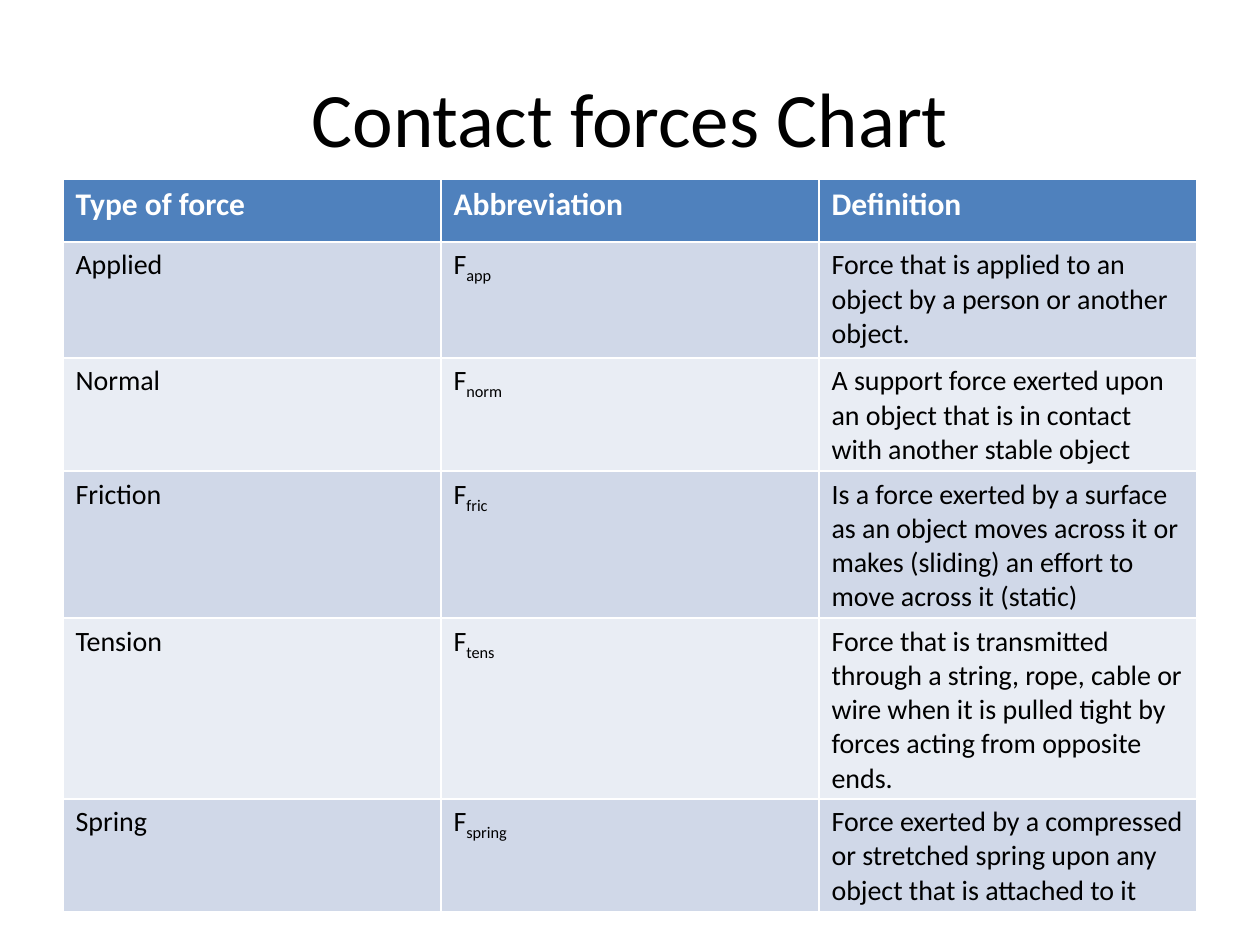
from typing import NamedTuple

from pptx import Presentation
from pptx.dml.color import RGBColor
from pptx.enum import text
from pptx.util import Inches, Pt

FONT = "Calibri"
BLACK = RGBColor(0x00, 0x00, 0x00)
WHITE = RGBColor(0xFF, 0xFF, 0xFF)
HEADER_BLUE = RGBColor(0x4F, 0x81, 0xBD)
BANDS = (RGBColor(0xD0, 0xD8, 0xE8), RGBColor(0xE9, 0xED, 0xF4))


class Force(NamedTuple):
    name: str
    subscript: str
    definition: str


HEADERS = ("Type of force", "Abbreviation", "Definition")
FORCES = (
    Force("Applied", "app",
          "Force that is applied to an object by a person or another object."),
    Force("Normal", "norm",
          "A support force exerted upon an object that is in contact with "
          "another stable object"),
    Force("Friction", "fric",
          "Is a force exerted by a surface as an object moves across it or "
          "makes (sliding) an effort to move across it (static)"),
    Force("Tension", "tens",
          "Force that is transmitted through a string, rope, cable or wire "
          "when it is pulled tight by forces acting from opposite ends."),
    Force("Spring", "spring",
          "Force exerted by a compressed or stretched spring upon any object "
          "that is attached to it"),
)
ROW_HEIGHTS = (0.5, 0.92, 0.79, 0.79, 0.79, 0.79)


def style_paragraph(p, size: float, color: RGBColor, bold: bool = False) -> None:
    p.font.name = FONT
    p.font.size = Pt(size)
    p.font.color.rgb = color
    p.font.bold = bold


def fill_cell(cell, content: str, fill: RGBColor, size: float, color: RGBColor,
              bold: bool = False, subscript: str = "") -> None:
    cell.fill.solid()
    cell.fill.fore_color.rgb = fill
    p = cell.text_frame.paragraphs[0]
    p.add_run().text = content
    if subscript:
        r = p.add_run()
        r.text = subscript
        r._r.get_or_add_rPr().set("baseline", "-25000")
    style_paragraph(p, size, color, bold)


def add_title(s, content: str) -> None:
    box = s.shapes.add_textbox(Inches(0.5), Inches(0.3), Inches(9), Inches(1.25))
    tf = box.text_frame
    tf.word_wrap = True
    tf.vertical_anchor = text.MSO_ANCHOR.MIDDLE
    p = tf.paragraphs[0]
    p.text = content
    p.alignment = text.PP_ALIGN.CENTER
    style_paragraph(p, 44, BLACK)


def add_force_table(s) -> None:
    frame = s.shapes.add_table(len(FORCES) + 1, len(HEADERS), Inches(0.5),
                               Inches(1.42), Inches(9), Inches(sum(ROW_HEIGHTS)))
    table = frame.table
    for row, height in zip(table.rows, ROW_HEIGHTS):
        row.height = Inches(height)

    # Header row
    for col, header in enumerate(HEADERS):
        fill_cell(table.cell(0, col), header, HEADER_BLUE, 18, WHITE, bold=True)

    # One banded row per force
    for i, force in enumerate(FORCES):
        band = BANDS[i % 2]
        name, abbreviation, definition = table.rows[i + 1].cells
        fill_cell(name, force.name, band, 16, BLACK)
        fill_cell(abbreviation, "F", band, 16, BLACK, subscript=force.subscript)
        fill_cell(definition, force.definition, band, 16, BLACK)


def main() -> None:
    prs = Presentation()
    prs.slide_width, prs.slide_height = Inches(10), Inches(7.5)
    s = prs.slides.add_slide(prs.slide_layouts[6])
    add_title(s, "Contact forces Chart")
    add_force_table(s)
    prs.save("out.pptx")


if __name__ == "__main__":
    main()
